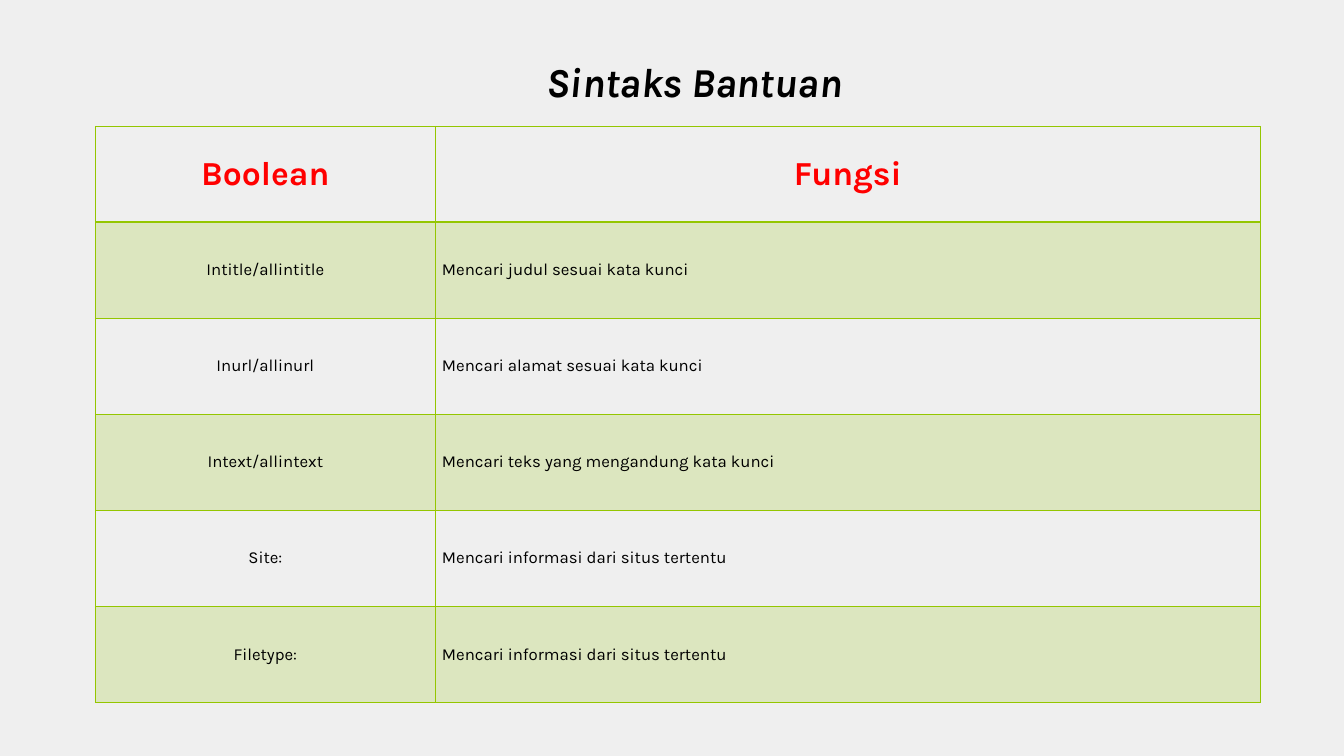
from lxml.etree import SubElement
from pptx import Presentation
from pptx.dml.color import RGBColor
from pptx.enum.text import MSO_ANCHOR as Anchor, PP_ALIGN as Align
from pptx.oxml import parse_xml
from pptx.oxml.ns import nsdecls, qn
from pptx.util import Cm, Pt

GREEN = "94C600"
TITLE = {"name": "Karla", "size": Pt(44), "bold": True, "italic": True}
HEADER = {"name": "Karla", "size": Pt(36), "bold": True}
BODY = {"name": "Karla", "size": Pt(18), "bold": False}
ROWS = [
    ("Boolean", "Fungsi"),
    ("Intitle/allintitle", "Mencari judul sesuai kata kunci"),
    ("Inurl/allinurl", "Mencari alamat sesuai kata kunci"),
    ("Intext/allintext", "Mencari teks yang mengandung kata kunci"),
    ("Site:", "Mencari informasi dari situs tertentu"),
    ("Filetype:", "Mencari informasi dari situs tertentu"),
]


def paint(target, color):
    """Give a fill or font a solid colour from a hex string."""
    if hasattr(target, "solid"):
        target.solid()
        target.fore_color.rgb = RGBColor.from_string(color)
    else:
        target.color.rgb = RGBColor.from_string(color)


def write(frame, text, style, color, align):
    """Write one styled paragraph into a text frame."""
    para = frame.paragraphs[0]
    para.alignment = align
    span = para.add_run()
    span.text = text
    for key, value in style.items():
        setattr(span.font, key, value)
    paint(span.font, color)


def shade(cell, banded):
    """Fill a cell with translucent green or leave it clear."""
    if not banded:
        cell.fill.background()
        return
    paint(cell.fill, GREEN)
    color = cell._tc.tcPr.find(qn("a:solidFill"))[0]
    SubElement(color, qn("a:alpha")).set("val", "20000")


def outline(cell, widths):
    """Draw the four cell borders, with widths in points by side."""
    for index, (side, width) in enumerate(widths.items()):
        border = parse_xml(
            f'<a:ln{side} {nsdecls("a")} w="{Pt(width)}"><a:solidFill>'
            f'<a:srgbClr val="{GREEN}"/></a:solidFill></a:ln{side}>')
        cell._tc.tcPr.insert(index, border)


def add_backdrop(page, left, top, width, height):
    """Cover the given box with a plain grey panel."""
    right, bottom = left + width, top + height
    outline_path = page.shapes.build_freeform(left, top)
    outline_path.add_line_segments([(right, top), (right, bottom), (left, bottom)])
    panel = outline_path.convert_to_shape()
    panel.shadow.inherit = False
    paint(panel.fill, "EFEFEF")
    panel.line.fill.background()


def add_title(page, left, top, width, height):
    """Place the slide title in the given box."""
    box = page.shapes.add_textbox(left, top, width, height)
    box.text_frame.word_wrap = True
    write(box.text_frame, "Sintaks Bantuan", TITLE, "000000", Align.CENTER)


def add_syntax_table(page, left, top, width, height):
    """Place the table of search operators in the given box."""
    table = page.shapes.add_table(len(ROWS), 2, left, top, width, height).table
    table.horz_banding = table.first_row = False
    table.columns[0].width = Cm(12.84)
    table.columns[1].width = width - Cm(12.84)
    for r, texts in enumerate(ROWS):
        table.rows[r].height = height // len(ROWS)
        for c, text in enumerate(texts):
            cell = table.cell(r, c)
            cell.vertical_anchor = Anchor.MIDDLE
            style, color = (BODY, "000000") if r else (HEADER, "FF0000")
            align = Align.LEFT if r and c else Align.CENTER
            write(cell.text_frame, text, style, color, align)
            shade(cell, r % 2 == 1)
            outline(cell, {"L": 1, "R": 1, "T": 2 if r == 1 else 1,
                           "B": 2 if r == 0 else 1})


def main():
    """Build the slide and save the deck."""
    deck = Presentation()
    deck.slide_width, deck.slide_height = Cm(50.8), Cm(28.58)
    page = deck.slides.add_slide(deck.slide_layouts[6])
    add_backdrop(page, 0, 0, deck.slide_width, deck.slide_height)
    add_syntax_table(page, Cm(3.61), Cm(4.77), Cm(44.02), Cm(21.79))
    add_title(page, Cm(13.13), Cm(2), Cm(26.24), Cm(2.13))
    deck.save("out.pptx")


if __name__ == "__main__":
    main()
